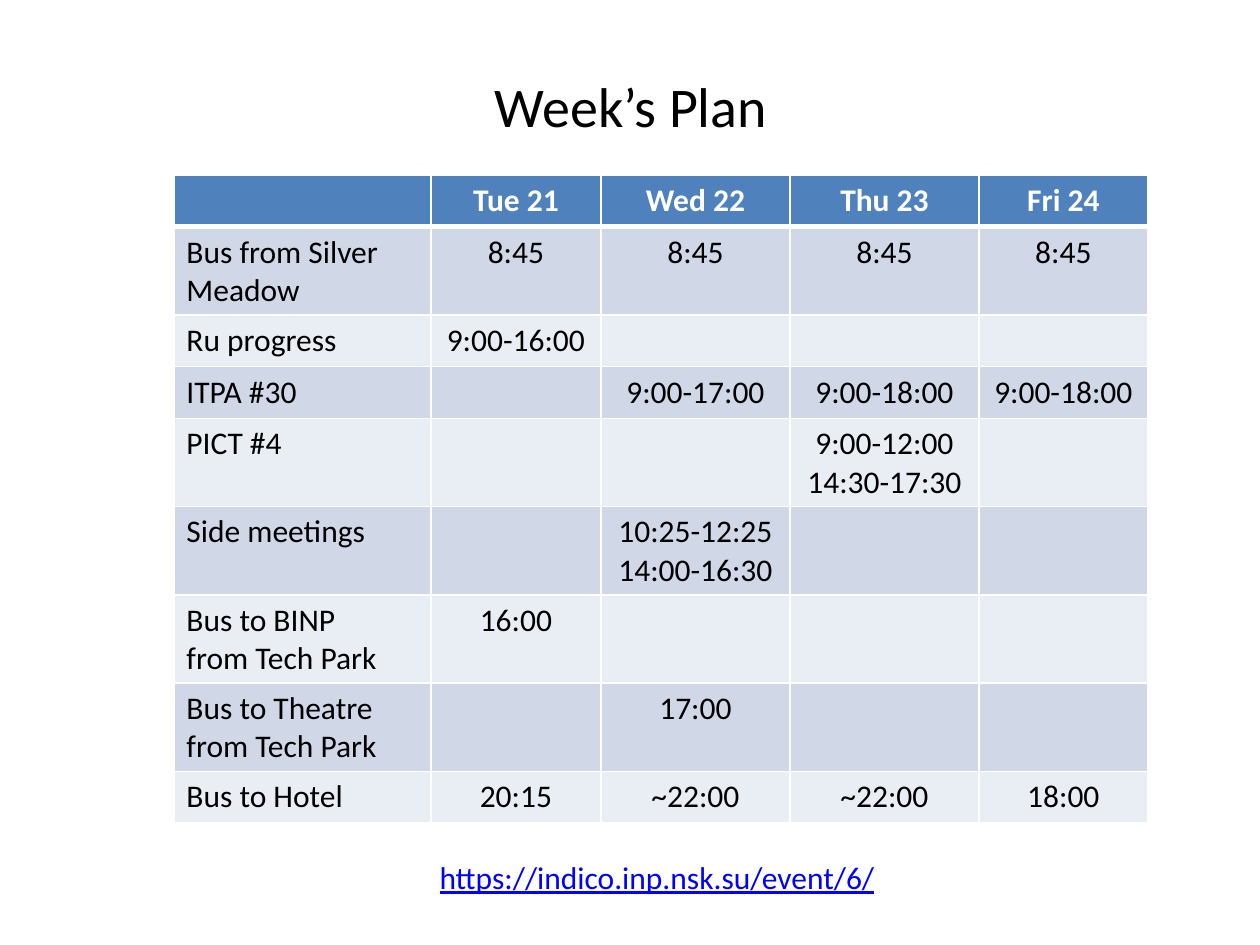
from dataclasses import dataclass

from lxml import etree
from pptx import Presentation, util as u
from pptx.dml.color import RGBColor
from pptx.enum import text
from pptx.oxml import ns
from pptx.slide import Slide

HEADINGS = ["", "Tue 21", "Wed 22", "Thu 23", "Fri 24"]
PLAN = [
    ["Bus from Silver Meadow", "8:45", "8:45", "8:45", "8:45"],
    ["Ru progress", "9:00-16:00", "", "", ""],
    ["ITPA #30", "", "9:00-17:00", "9:00-18:00", "9:00-18:00"],
    ["PICT #4", "", "", "9:00-12:00\n14:30-17:30", ""],
    ["Side meetings", "", "10:25-12:25\n14:00-16:30", "", ""],
    ["Bus to BINP\nfrom Tech Park", "16:00", "", "", ""],
    ["Bus to Theatre\nfrom Tech Park", "", "17:00", "", ""],
    ["Bus to Hotel", "20:15", "~22:00", "~22:00", "18:00"],
]
COLUMN_WIDTHS = [2.04, 1.35, 1.5, 1.5, 1.34]
ROW_HEIGHT = 0.41


def rgb(value):
    return RGBColor.from_string(value)


@dataclass
class SlideBuilder:
    slide: Slide
    font: str = "Calibri"
    size: int = 18
    ink: str = "000000"
    paper: str = "FFFFFF"
    link: str = "0000FF"
    header: str = "4F81BD"
    bands: tuple = ("D0D8E8", "E9EDF4")

    def style(self, paragraph, color, size=None, bold=False, underline=False):
        font = paragraph.font
        font.name = self.font
        font.size = u.Pt(size or self.size)
        font.bold = bold
        font.underline = underline
        font.color.rgb = rgb(color)

    def text_box(self, wording, left, top, width, height, color=None, **font):
        box = self.slide.shapes.add_textbox(*map(u.Inches, (left, top, width, height)))
        frame = box.text_frame
        frame.word_wrap = False
        frame.auto_size = text.MSO_AUTO_SIZE.SHAPE_TO_FIT_TEXT
        frame.text = wording
        self.style(frame.paragraphs[0], color or self.ink, **font)

    def border(self, cell, side, points):
        properties = cell._tc.get_or_add_tcPr()
        line = etree.SubElement(properties, ns.qn(f"a:ln{side}"), w=str(u.Pt(points)))
        fill = etree.SubElement(line, ns.qn("a:solidFill"))
        etree.SubElement(fill, ns.qn("a:srgbClr"), val=self.paper)

    def cell(self, cell, wording, row, column):
        is_header = row == 0
        for side in "LRTB":
            under_header = (row, side) in ((0, "B"), (1, "T"))
            self.border(cell, side, 3 if under_header else 1)
        cell.fill.solid()
        cell.fill.fore_color.rgb = rgb(self.header if is_header else self.bands[(row - 1) % 2])
        cell.text = wording
        for paragraph in cell.text_frame.paragraphs:
            if column > 0:
                paragraph.alignment = text.PP_ALIGN.CENTER
            self.style(paragraph, self.paper if is_header else self.ink, bold=is_header)

    def table(self, rows, left, top, widths, row_height):
        table = self.slide.shapes.add_table(
            len(rows), len(widths), u.Inches(left), u.Inches(top),
            u.Inches(sum(widths)), u.Inches(row_height * len(rows))).table
        for column, width in zip(table.columns, widths):
            column.width = u.Inches(width)
        for row, wordings in enumerate(rows):
            table.rows[row].height = u.Inches(row_height)
            for column, wording in enumerate(wordings):
                self.cell(table.cell(row, column), wording, row, column)


def main():
    presentation = Presentation()
    presentation.slide_width = u.Inches(10)
    presentation.slide_height = u.Inches(7.5)
    builder = SlideBuilder(presentation.slides.add_slide(presentation.slide_layouts[6]))
    builder.text_box("Week’s Plan", 3.83, 0.52, 2.38, 0.64, size=32)
    builder.table([HEADINGS, *PLAN], 1.38, 1.39, COLUMN_WIDTHS, ROW_HEIGHT)
    builder.text_box("https://indico.inp.nsk.su/event/6/", 3.39, 6.76, 3.76, 0.4,
                     color=builder.link, underline=True)
    presentation.save("out.pptx")


if __name__ == "__main__":
    main()
